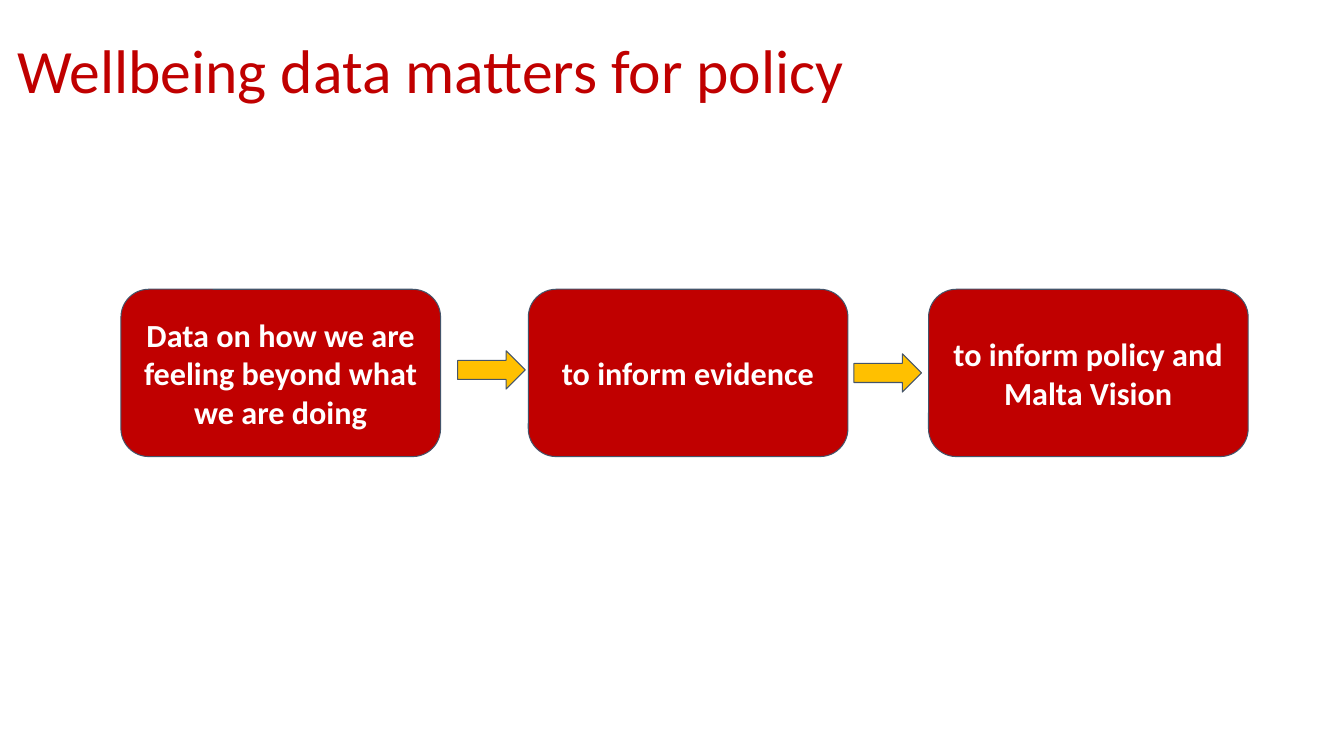
"""Build a slide showing how wellbeing data leads to policy."""
from pptx import Presentation
from pptx.dml.color import RGBColor
from pptx.enum.shapes import MSO_SHAPE
from pptx.enum.text import MSO_ANCHOR, PP_ALIGN
from pptx.util import Inches, Pt

ROUNDED = MSO_SHAPE.ROUNDED_RECTANGLE
ARROW = MSO_SHAPE.RIGHT_ARROW
MIDDLE = MSO_ANCHOR.MIDDLE
LEFT = PP_ALIGN.LEFT
CENTER = PP_ALIGN.CENTER

RED = RGBColor(0xC0, 0x00, 0x00)
GOLD = RGBColor(0xFF, 0xC0, 0x00)
SLATE = RGBColor(0x44, 0x54, 0x6A)
WHITE = RGBColor(0xFF, 0xFF, 0xFF)

STEPS = [
    (1.2, "Data on how we are feeling beyond what we are doing"),
    (5.24, "to inform evidence"),
    (9.21, "to inform policy and Malta Vision"),
]
ARROWS = [(4.54, 3.48), (8.47, 3.51)]


def write_text(box, text, *, size, color, bold=False, align=LEFT,
               spacing=1.0, inset_x=0.1, inset_y=0.1):
    frame = box.text_frame
    frame.word_wrap = True
    frame.vertical_anchor = MIDDLE
    frame.margin_left = frame.margin_right = Inches(inset_x)
    frame.margin_top = frame.margin_bottom = Inches(inset_y)
    para = frame.paragraphs[0]
    para.alignment = align
    para.line_spacing = spacing
    span = para.add_run()
    span.text = text
    span.font.name = "Calibri"
    span.font.size = Pt(size)
    span.font.bold = bold
    span.font.color.rgb = color


class FlowSlide:
    def __init__(self, page):
        self.page = page
        self.outline = SLATE
        self.outline_width = Pt(0.75)

    def title(self, text):
        box = self.page.shapes.add_textbox(
            Inches(0.17), Inches(0), Inches(11.5), Inches(1.45))
        write_text(box, text, size=44, color=RED, spacing=0.9,
                   inset_x=0, inset_y=0.05)

    def shape(self, kind, left, top, width, height, fill):
        shape = self.page.shapes.add_shape(
            kind, Inches(left), Inches(top), Inches(width), Inches(height))
        shape.shadow.inherit = False
        shape.fill.solid()
        shape.fill.fore_color.rgb = fill
        shape.line.color.rgb = self.outline
        shape.line.width = self.outline_width
        return shape

    def step(self, left, text):
        box = self.shape(ROUNDED, left, 2.87, 3.17, 1.66, RED)
        write_text(box, text, size=23, color=WHITE, bold=True, align=CENTER)

    def arrow(self, left, top):
        self.shape(ARROW, left, top, 0.67, 0.38, GOLD)


def main():
    deck = Presentation()
    deck.slide_width = Inches(13.33)
    deck.slide_height = Inches(7.5)
    slide = FlowSlide(deck.slides.add_slide(deck.slide_layouts[6]))
    slide.title("Wellbeing data matters for policy")
    for left, text in STEPS:
        slide.step(left, text)
    for left, top in ARROWS:
        slide.arrow(left, top)
    deck.save("out.pptx")


if __name__ == "__main__":
    main()
